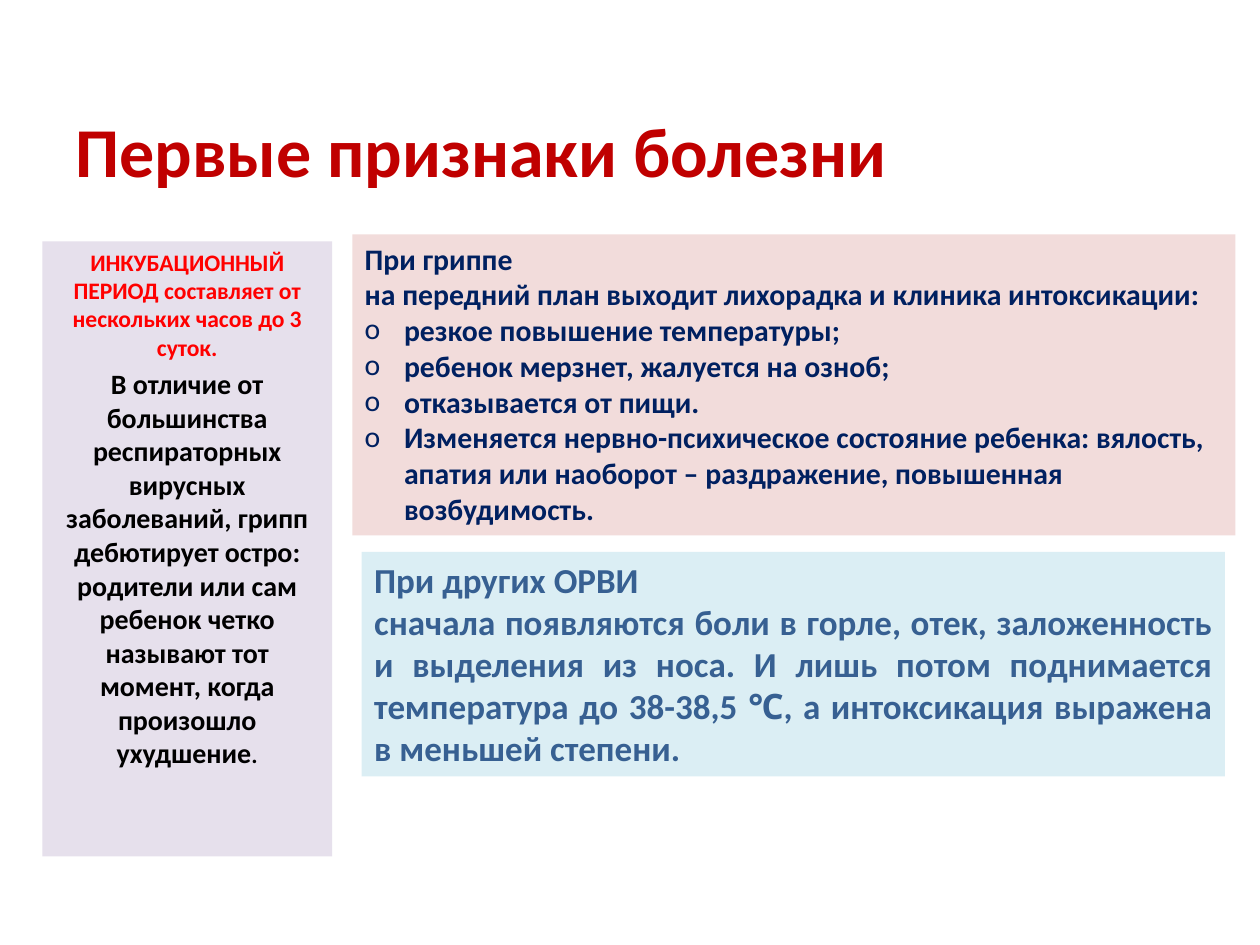
from lxml.etree import SubElement
from pptx import Presentation
from pptx.dml.color import RGBColor
from pptx.enum.text import MSO_ANCHOR as Anchor, PP_ALIGN as Align
from pptx.oxml.ns import qn
from pptx.util import Pt

FLU_INTRO = ["При гриппе", "на передний план выходит лихорадка и клиника интоксикации:"]
FLU_SIGNS = [
    "резкое повышение температуры;",
    "ребенок мерзнет, жалуется на озноб;",
    "отказывается от пищи.",
    "Изменяется нервно-психическое состояние ребенка: вялость, "
    "апатия или наоборот – раздражение, повышенная возбудимость.",
]
COLDS = [
    "При других ОРВИ",
    "сначала появляются боли в горле, отек, заложенность и выделения из носа. "
    "И лишь потом поднимается температура до 38-38,5 ℃, "
    "а интоксикация выражена в меньшей степени.",
]
INCUBATION = "ИНКУБАЦИОННЫЙ ПЕРИОД составляет от нескольких часов до 3 суток."
ONSET = (
    "В отличие от большинства респираторных вирусных заболеваний, грипп дебютирует остро: "
    "родители или сам ребенок четко называют тот момент, когда произошло ухудшение"
)


def color(value):
    """Turn a hex string into a colour."""
    return RGBColor.from_string(value)


def add_panel(slide, box, fill=None, anchor=Anchor.TOP):
    """Add a text panel, filled if a colour is given, and return its text frame."""
    sp = slide.shapes.add_textbox(*map(Pt, box))
    if fill:
        sp.fill.solid()
        sp.fill.fore_color.rgb = color(fill)
    tf = sp.text_frame
    for name, value in {"word_wrap": True, "vertical_anchor": anchor}.items():
        setattr(tf, name, value)
    return tf


def add_run(p, text, size, hex_color):
    """Add a bold run to a paragraph."""
    r = p.add_run()
    r.text = text
    for name, value in {"name": "Calibri", "size": Pt(size), "bold": True}.items():
        setattr(r.font, name, value)
    r.font.color.rgb = color(hex_color)


def add_paragraph(tf, text, size, hex_color, **layout):
    """Add a paragraph, using the empty first one if it is free."""
    first = tf.paragraphs[0]
    p = tf.add_paragraph() if first.runs else first
    for name, value in layout.items():
        setattr(p, name, value)
    add_run(p, text, size, hex_color)
    return p


def add_bullet(p, char="o", indent=22.5):
    """Give a paragraph a hanging bullet."""
    pPr = p._p.get_or_add_pPr()
    pPr.set("marL", str(Pt(indent)))
    pPr.set("indent", str(Pt(-indent)))
    SubElement(pPr, qn("a:buFont"), typeface="Calibri")
    SubElement(pPr, qn("a:buChar"), char=char)


def main():
    """Build the slide and save it."""
    prs = Presentation()
    prs.slide_width, prs.slide_height = Pt(720), Pt(540)
    slide = prs.slides.add_slide(prs.slide_layouts[6])

    title = add_panel(slide, (36, 21.6, 647.3, 91.4), anchor=Anchor.BOTTOM)
    add_paragraph(title, "Первые признаки болезни", 40, "C00000")

    period = add_panel(slide, (24.2, 138, 165.6, 351.4), "E6E0EC")
    add_paragraph(period, INCUBATION, 13.5, "FF0000", alignment=Align.CENTER, space_before=Pt(3))
    p = add_paragraph(period, ONSET, 16, "000000", alignment=Align.CENTER, space_before=Pt(3.2))
    add_run(p, ".", 13.5, "000000")

    colds = add_panel(slide, (206.7, 315.4, 493.2, 128.2), "DBEEF4")
    for text in COLDS:
        add_paragraph(colds, text, 20, "376092", alignment=Align.JUSTIFY)

    flu = add_panel(slide, (201.3, 133.9, 504.7, 172), "F2DCDB")
    for text in FLU_INTRO:
        add_paragraph(flu, text, 17, "002060")
    for text in FLU_SIGNS:
        add_bullet(add_paragraph(flu, text, 17, "002060"))

    prs.save("out.pptx")


if __name__ == "__main__":
    main()
